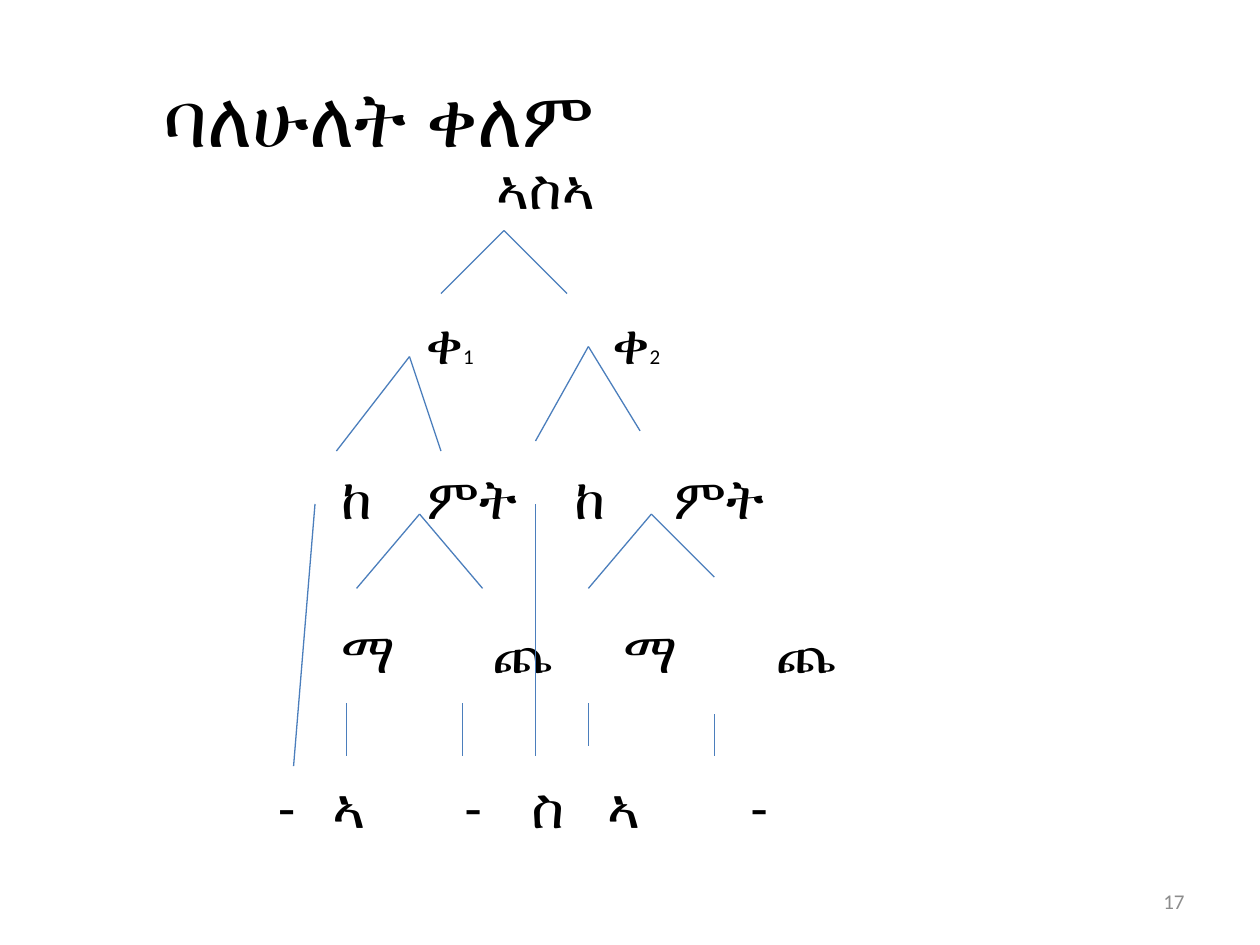
"""Build a slide showing the syllable tree of a two-syllable word."""
import pptx
import pptx.dml.color
import pptx.enum.shapes
import pptx.enum.text
import pptx.oxml.ns
import pptx.util
from lxml import etree
from pptx.util import Inches

BLACK = pptx.dml.color.RGBColor(0x00, 0x00, 0x00)
GREY = pptx.dml.color.RGBColor(0x8C, 0x8C, 0x8C)
BLUE = pptx.dml.color.RGBColor(0x4B, 0x7E, 0xBC)

TREE_LEVELS = [
    [(3.34, "ኣስኣ", "")],
    [(2.78, "ቀ", "1"), (4.26, "ቀ", "2")],
    [(2.11, "ከ", ""), (2.79, "ምት", ""), (3.96, "ከ", ""), (4.75, "ምት", "")],
    [(2.11, "ማ", ""), (3.31, "ጨ", ""), (4.35, "ማ", ""), (5.56, "ጨ", "")],
    [(1.61, "-", ""), (2.04, "ኣ", ""), (3.09, "-", ""),
     (3.62, "ስ", ""), (4.22, "ኣ", ""), (5.36, "-", "")],
]

BRANCHES = [
    ((4, 1.83), [(3.5, 2.33), (4.5, 2.33)]),
    ((3.25, 2.83), [(2.67, 3.58), (3.5, 3.58)]),
    ((4.67, 2.75), [(4.25, 3.5), (5.08, 3.42)]),
    ((3.33, 4.08), [(3.83, 4.67), (2.83, 4.67)]),
    ((5.17, 4.08), [(5.67, 4.58), (4.67, 4.67)]),
    ((2.5, 4), [(2.33, 6.08)]),
    ((4.25, 4), [(4.25, 6)]),
    ((2.75, 5.58), [(2.75, 6)]),
    ((3.67, 5.58), [(3.67, 6)]),
    ((4.67, 5.58), [(4.67, 5.92)]),
    ((5.67, 5.67), [(5.67, 6)]),
]


def add_text_frame(slide, bounds, **frame_format):
    """Add a wrapping text box and return its text frame."""
    frame = slide.shapes.add_textbox(*map(Inches, bounds)).text_frame
    frame.word_wrap = True
    for name, value in frame_format.items():
        setattr(frame, name, value)
    return frame


def add_run(paragraph, wording, size, color=BLACK):
    """Add a run of formatted text to a paragraph."""
    run = paragraph.add_run()
    run.text = wording
    font_format = {"name": "Calibri", "size": pptx.util.Pt(size)}
    for name, value in font_format.items():
        setattr(run.font, name, value)
    run.font.color.rgb = color


def add_tab_stops(paragraph, positions):
    """Give a paragraph left tab stops at the positions in inches."""
    properties = paragraph._p.get_or_add_pPr()
    stops = etree.SubElement(properties, pptx.oxml.ns.qn("a:tabLst"))
    for position in positions:
        etree.SubElement(stops, pptx.oxml.ns.qn("a:tab"),
                         pos=str(Inches(position)), algn="l")


def add_levels(slide):
    """Write each level of the tree as one line of tabbed nodes."""
    frame = add_text_frame(slide, (0.5, 1.17, 9, 5.53))
    for index, nodes in enumerate(TREE_LEVELS):
        level = frame.add_paragraph() if index else frame.paragraphs[0]
        add_tab_stops(level, [position for position, _, _ in nodes])
        if index:
            level.space_before = pptx.util.Pt(50)
        for _, node, number in nodes:
            add_run(level, "\t" + node, 32)
            if number:
                add_run(level, number, 12)


def add_branch(slide, parent, child):
    """Draw a line from a parent node to a child node."""
    branch = slide.shapes.add_connector(
        pptx.enum.shapes.MSO_CONNECTOR.STRAIGHT, *map(Inches, parent + child))
    branch.line.color.rgb = BLUE
    branch.line.width = pptx.util.Pt(0.75)
    etree.SubElement(branch._element.spPr, pptx.oxml.ns.qn("a:effectLst"))


def main():
    """Build and save the slide."""
    presentation = pptx.Presentation()
    presentation.slide_width = Inches(10)
    presentation.slide_height = Inches(7.5)
    slide = presentation.slides.add_slide(presentation.slide_layouts[6])
    middle = pptx.enum.text.MSO_ANCHOR.MIDDLE

    title = add_text_frame(slide, (0.5, 0.3, 9, 1.25),
                           vertical_anchor=middle, margin_left=Inches(0.8))
    add_run(title.paragraphs[0], "ባለሁለት ቀለም", 44)
    add_levels(slide)
    for parent, children in BRANCHES:
        for child in children:
            add_branch(slide, parent, child)

    page = add_text_frame(slide, (7.17, 6.95, 2.33, 0.4), vertical_anchor=middle)
    page.paragraphs[0].alignment = pptx.enum.text.PP_ALIGN.RIGHT
    add_run(page.paragraphs[0], "17", 12, GREY)
    presentation.save("out.pptx")


if __name__ == "__main__":
    main()
